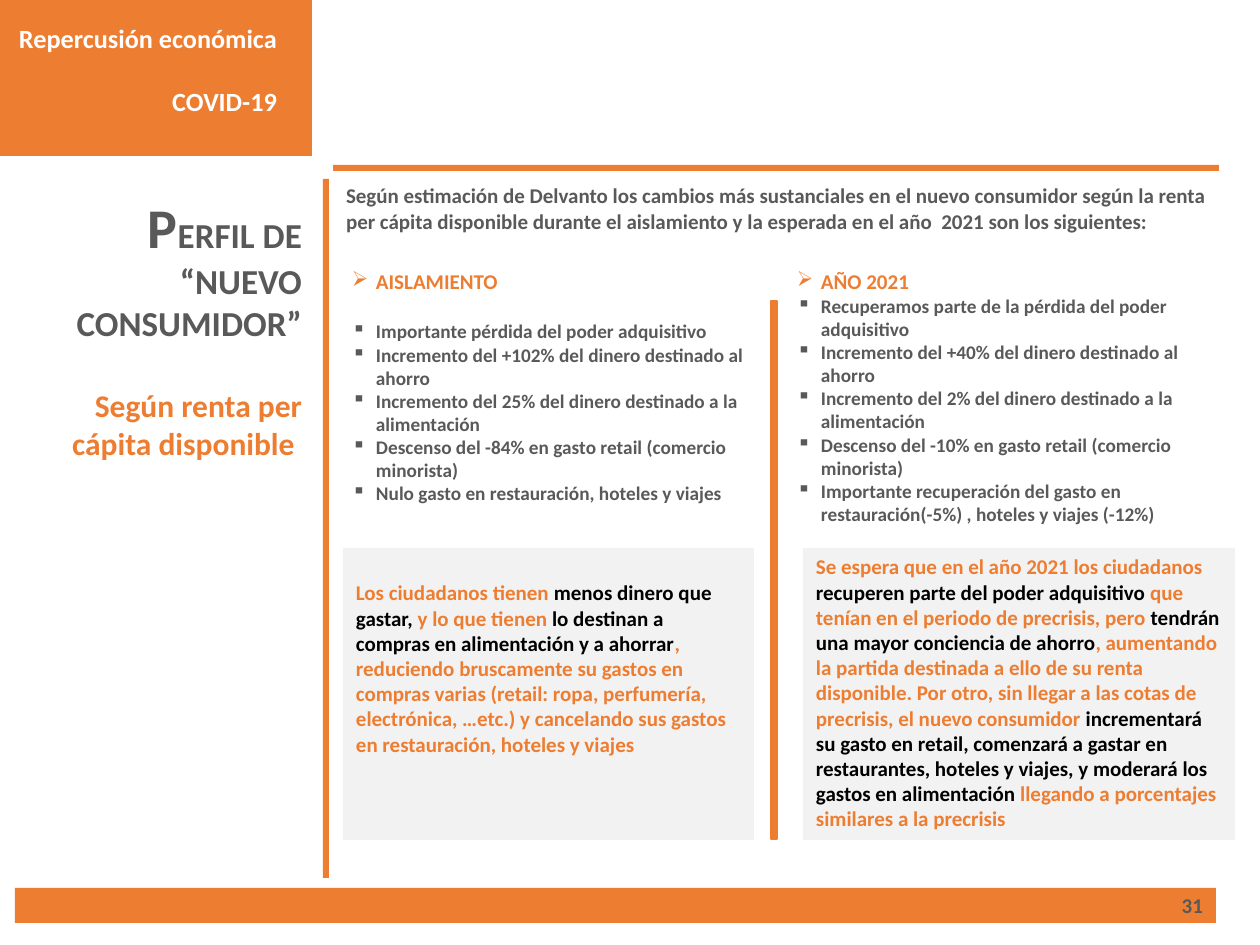
from lxml.etree import SubElement
from pptx import Presentation
from pptx.dml.color import RGBColor
from pptx.enum.shapes import MSO_SHAPE
from pptx.enum.text import MSO_ANCHOR, MSO_AUTO_SIZE, PP_ALIGN
from pptx.oxml.ns import qn
from pptx.util import Emu, Pt

SCALE = 914400 / 126  # EMU in one px
COLOURS = {
    "orange": "ED7D31",
    "grey": "595959",
    "panel": "F2F2F2",
    "black": "000000",
    "white": "FFFFFF",
}
FONT = "Calibri"
HANGING = 24  # bullet indent

ISOLATION = [
    "Importante pérdida del poder adquisitivo",
    "Incremento del +102% del dinero destinado al ahorro",
    "Incremento del 25% del dinero destinado a la alimentación",
    "Descenso del -84% en gasto retail (comercio minorista)",
    "Nulo gasto en restauración, hoteles y viajes",
]
YEAR_2021 = [
    "Recuperamos parte de la pérdida del poder adquisitivo",
    "Incremento del +40% del dinero destinado al ahorro",
    "Incremento del 2% del dinero destinado a la alimentación",
    "Descenso del -10% en gasto retail (comercio minorista)",
    "Importante recuperación del gasto en restauración(-5%) , hoteles y viajes (-12%)",
]
# Summary spans alternate between orange and black
ISOLATION_SUMMARY = [
    "Los ciudadanos tienen ",
    "menos dinero que gastar, ",
    "y lo que tienen ",
    "lo destinan a compras en alimentación y a ahorrar",
    ", reduciendo bruscamente su gastos en compras varias (retail: ropa, perfumería, "
    "electrónica, …etc.) y cancelando sus gastos en restauración, hoteles y viajes",
]
YEAR_2021_SUMMARY = [
    "Se espera que en el año 2021 los ciudadanos ",
    "recuperen parte del poder adquisitivo ",
    "que tenían en el periodo de precrisis, pero ",
    "tendrán una mayor conciencia de ahorro",
    ", aumentando la partida destinada a ello de su renta disponible. Por otro, "
    "sin llegar a las cotas de precrisis, el nuevo consumidor ",
    "incrementará su gasto en retail, comenzará a gastar en restaurantes, hoteles "
    "y viajes, y moderará los gastos en alimentación",
    " llegando a porcentajes similares a la precrisis",
]


def px(length):
    return Emu(round(length * SCALE))


def colour(name):
    return RGBColor.from_string(COLOURS[name])


def add_block(page, area, fill="orange", outlined=False):
    block = page.shapes.add_shape(MSO_SHAPE.RECTANGLE, *map(px, area))
    block.shadow.inherit = False
    block.fill.solid()
    block.fill.fore_color.rgb = colour(fill)
    if outlined:
        block.line.color.rgb = colour(fill)
        block.line.width = Pt(1)
    else:
        block.line.fill.background()
    return block


def add_text_box(page, area, top_inset):
    return set_frame(page.shapes.add_textbox(*map(px, area)), top_inset)


def set_frame(shape, top_inset=6, right_inset=13, anchor=MSO_ANCHOR.TOP):
    frame = shape.text_frame
    frame.word_wrap = True
    frame.auto_size = MSO_AUTO_SIZE.NONE
    frame.vertical_anchor = anchor
    frame.margin_left, frame.margin_right = px(13), px(right_inset)
    frame.margin_top, frame.margin_bottom = px(top_inset), px(6)
    return frame


def add_paragraph(frame, spans, align=PP_ALIGN.LEFT, gap=0):
    """Each span is (text, size, colour name); gap is the space above in points."""
    first = frame.paragraphs[0]
    para = frame.add_paragraph() if first.runs else first
    para.alignment = align
    para.space_before = Pt(gap)
    for text, size, colour_name in spans:
        span = para.add_run()
        span.text = text
        span.font.name = FONT
        span.font.size = Pt(size)
        span.font.bold = True
        span.font.color.rgb = colour(colour_name)
    return para


def add_bullet(frame, symbol, span, gap=0):
    para = add_paragraph(frame, [span], gap=gap)
    properties = para._p.get_or_add_pPr()
    properties.set("marL", str(px(HANGING)))
    properties.set("indent", str(-px(HANGING)))
    SubElement(properties, qn("a:buChar")).set("char", symbol)


def add_column(page, area, heading, points, gap):
    frame = add_text_box(page, area, top_inset=28)
    add_bullet(frame, "➢", (heading, 12, "orange"))
    for index, point in enumerate(points):
        add_bullet(frame, "▪", (point, 11, "grey"), gap=0 if index else gap)


def add_summary(page, area, texts, top_inset):
    frame = set_frame(add_block(page, area, "panel"), top_inset)
    spans = [(text, 12, ("orange", "black")[index % 2]) for index, text in enumerate(texts)]
    add_paragraph(frame, spans)


def add_frame_bars(page):
    # Footer with page number
    footer = set_frame(add_block(page, (15, 888, 1201, 35)), anchor=MSO_ANCHOR.MIDDLE)
    add_paragraph(footer, [("31", 12, "grey")], PP_ALIGN.RIGHT)
    # Topic block in the corner
    topic = set_frame(add_block(page, (0, -3, 312, 159)), top_inset=25, right_inset=35)
    add_paragraph(topic, [("Repercusión económica", 15, "white")], PP_ALIGN.RIGHT)
    add_paragraph(topic, [("COVID-19", 15, "white")], PP_ALIGN.RIGHT, gap=18)
    # Horizontal and vertical rules
    add_block(page, (333, 165, 886, 6))
    add_block(page, (323, 179, 6, 699))


def set_title(page):
    title = page.shapes.title
    title.left, title.top, title.width, title.height = map(px, (20, 186, 295, 318))
    frame = set_frame(title)
    add_paragraph(
        frame,
        [("P", 32, "grey"), ("ERFIL DE “NUEVO CONSUMIDOR”", 20, "grey")],
        PP_ALIGN.RIGHT,
    )
    subtitle = ("Según renta per cápita disponible ", 18, "orange")
    add_paragraph(frame, [subtitle], PP_ALIGN.RIGHT, gap=24.4)


def main():
    deck = Presentation()
    deck.slide_width, deck.slide_height = px(1260), px(945)
    page = deck.slides.add_slide(deck.slide_layouts[5])

    add_frame_bars(page)
    set_title(page)

    # Introduction
    intro = add_text_box(page, (333, 155, 903, 204), top_inset=28)
    add_paragraph(intro, [(
        "Según estimación de Delvanto los cambios más sustanciales en el nuevo "
        "consumidor según la renta per cápita disponible durante el aislamiento y "
        "la esperada en el año  2021 son los siguientes:", 12, "grey")])

    # Two periods side by side
    add_column(page, (339, 241, 427, 272), "AISLAMIENTO", ISOLATION, gap=14.6)
    add_column(page, (784, 241, 451, 319), "AÑO 2021", YEAR_2021, gap=0)
    add_summary(page, (343, 548, 411, 292), ISOLATION_SUMMARY, top_inset=32)
    add_summary(page, (803, 548, 432, 292), YEAR_2021_SUMMARY, top_inset=6)
    add_block(page, (771, 301, 6, 538), outlined=True)

    deck.save("out.pptx")


if __name__ == "__main__":
    main()
